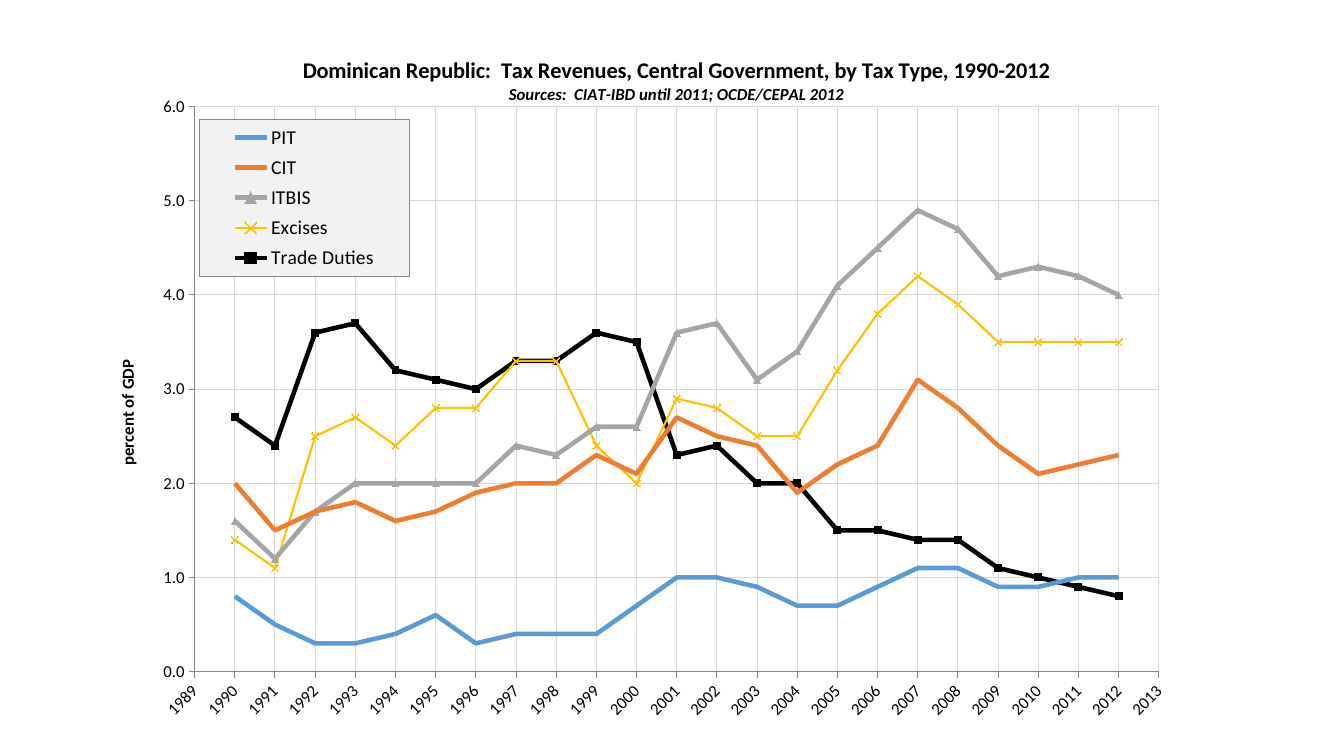
from pptx import Presentation
from pptx import util as u
from pptx.chart import data as chart_data
from pptx.dml.color import RGBColor
from pptx.enum import chart as kinds
from pptx.oxml import parse_xml
from pptx.oxml.ns import nsdecls, qn

BLACK = RGBColor(0x00, 0x00, 0x00)
BLUE = RGBColor(0x5B, 0x9B, 0xD5)
ORANGE = RGBColor(0xED, 0x7D, 0x31)
GRAY = RGBColor(0xA5, 0xA5, 0xA5)
GOLD = RGBColor(0xFF, 0xC0, 0x00)
GRID = RGBColor(0xD9, 0xD9, 0xD9)
AXIS = RGBColor(0x86, 0x86, 0x86)
LEGEND_FILL = RGBColor(0xF2, 0xF2, 0xF2)

MARKER = kinds.XL_MARKER_STYLE
YEARS = range(1990, 2013)
# name, colour, line width, marker, revenue in percent of GDP per year
TAXES = [
    ("PIT", BLUE, 3.25, MARKER.NONE,
     [0.8, 0.5, 0.3, 0.3, 0.4, 0.6, 0.3, 0.4, 0.4, 0.4, 0.7, 1, 1, 0.9, 0.7,
      0.7, 0.9, 1.1, 1.1, 0.9, 0.9, 1, 1]),
    ("CIT", ORANGE, 3.25, MARKER.NONE,
     [2, 1.5, 1.7, 1.8, 1.6, 1.7, 1.9, 2, 2, 2.3, 2.1, 2.7, 2.5, 2.4, 1.9,
      2.2, 2.4, 3.1, 2.8, 2.4, 2.1, 2.2, 2.3]),
    ("ITBIS", GRAY, 3.25, MARKER.TRIANGLE,
     [1.6, 1.2, 1.7, 2, 2, 2, 2, 2.4, 2.3, 2.6, 2.6, 3.6, 3.7, 3.1, 3.4,
      4.1, 4.5, 4.9, 4.7, 4.2, 4.3, 4.2, 4]),
    ("Excises", GOLD, 1.5, MARKER.X,
     [1.4, 1.1, 2.5, 2.7, 2.4, 2.8, 2.8, 3.3, 3.3, 2.4, 2, 2.9, 2.8, 2.5, 2.5,
      3.2, 3.8, 4.2, 3.9, 3.5, 3.5, 3.5, 3.5]),
    ("Trade Duties", BLACK, 3.25, MARKER.SQUARE,
     [2.7, 2.4, 3.6, 3.7, 3.2, 3.1, 3, 3.3, 3.3, 3.6, 3.5, 2.3, 2.4, 2, 2,
      1.5, 1.5, 1.4, 1.4, 1.1, 1, 0.9, 0.8]),
]


def place(element, after, **fractions):
    """Give a chart part a manual layout, as fractions of the chart."""
    old = element.find(qn("c:layout"))
    if old is not None:
        element.remove(old)
    target = '<c:layoutTarget val="inner"/>' if after is None else ""
    modes = "".join(f'<c:{key}Mode val="edge"/>' for key in "xy")
    sizes = "".join(f'<c:{key} val="{value}"/>' for key, value in fractions.items())
    layout = parse_xml(f'<c:layout {nsdecls("c")}><c:manualLayout>{target}{modes}{sizes}'
                       '</c:manualLayout></c:layout>')
    if after is None:
        element.insert(0, layout)
    else:
        element.find(qn(after)).addnext(layout)


class ChartSlide:
    font_name = "Calibri"

    def __init__(self, presentation):
        self.slide = presentation.slides.add_slide(presentation.slide_layouts[6])

    def style(self, font, size, bold=False, italic=False):
        font.name, font.size = self.font_name, u.Pt(size)
        font.bold, font.italic = bold, italic
        font.color.rgb = BLACK

    def scatter(self, left, top, width, height):
        data = chart_data.XyChartData(number_format="0.0")
        for name, _, _, _, values in TAXES:
            series = data.add_series(name)
            for year, value in zip(YEARS, values):
                series.add_data_point(year, value)
        frame = self.slide.shapes.add_chart(
            kinds.XL_CHART_TYPE.XY_SCATTER_LINES_NO_MARKERS,
            u.Pt(left), u.Pt(top), u.Pt(width), u.Pt(height), data)
        self.chart = frame.chart
        self.style(self.chart.font, 12)
        plot = self.chart.plots[0]
        plot.vary_by_categories = False
        for series, (_, color, width, marker, _) in zip(plot.series, TAXES):
            self.line(series, color, width, marker)
        plot_area = self.chart.element.find(".//" + qn("c:plotArea"))
        place(plot_area, None, x=0.09, y=0.109, w=0.826, h=0.816)

    def line(self, series, color, width, marker):
        series.smooth = False
        series.format.line.color.rgb = color
        series.format.line.width = u.Pt(width)
        series.marker.style = marker
        if marker == MARKER.NONE:
            return
        series.marker.size = 5
        series.marker.format.line.color.rgb = color
        if marker == MARKER.X:
            series.marker.format.fill.background()
        else:
            series.marker.format.fill.solid()
            series.marker.format.fill.fore_color.rgb = color

    def axis(self, axis, low, high, number_format):
        axis.minimum_scale, axis.maximum_scale, axis.major_unit = low, high, 1
        axis.major_tick_mark = kinds.XL_TICK_MARK.OUTSIDE
        axis.has_major_gridlines = True
        for line, color in ((axis.major_gridlines.format.line, GRID),
                            (axis.format.line, AXIS)):
            line.color.rgb, line.width = color, u.Pt(0.75)
        axis.tick_labels.number_format = number_format
        axis.tick_labels.number_format_is_linked = False
        self.style(axis.tick_labels.font, 12)

    def title(self, owner, lines, x, y):
        """Write lines of (text, size, italic) as a chart or axis title."""
        frame = owner.text_frame
        for index, (words, size, italic) in enumerate(lines):
            paragraph = frame.paragraphs[0] if index == 0 else frame.add_paragraph()
            paragraph.text = words
            self.style(paragraph.runs[0].font, size, True, italic)
        place(owner._element, "c:tx", x=x, y=y)

    def legend(self, size, **position):
        self.chart.has_legend = True
        legend = self.chart.legend
        legend.position = kinds.XL_LEGEND_POSITION.RIGHT
        legend.include_in_layout = True
        self.style(legend.font, size)
        element = legend._element
        place(element, "c:legendPos", **position)
        element.find(qn("c:overlay")).addnext(parse_xml(
            f'<c:spPr {nsdecls("c", "a")}>'
            f'<a:solidFill><a:srgbClr val="{LEGEND_FILL}"/></a:solidFill>'
            f'<a:ln w="{u.Pt(0.75)}"><a:solidFill><a:srgbClr val="{AXIS}"/></a:solidFill>'
            '</a:ln></c:spPr>'))


def rotate(element, degrees):
    body = element.find(".//" + qn("a:bodyPr"))
    body.set("rot", str(degrees * 60000))
    body.set("vert", "horz")


def main():
    presentation = Presentation()
    presentation.slide_width, presentation.slide_height = u.Pt(960), u.Pt(540)
    page = ChartSlide(presentation)
    page.scatter(64, 22.3, 833.8, 494.6)
    year_axis, share_axis = page.chart.category_axis, page.chart.value_axis
    page.axis(year_axis, 1989, 2013, "0")
    page.axis(share_axis, 0, 6, "0.0")
    rotate(year_axis._element.find(qn("c:txPr")), -45)
    page.title(page.chart.chart_title, [
        ("Dominican Republic:  Tax Revenues, Central Government, by Tax Type, 1990-2012",
         16, False),
        ("Sources:  CIAT-IBD until 2011; OCDE/CEPAL 2012", 12, True),
    ], 0.18, 0.03)
    page.title(share_axis.axis_title, [("percent of GDP", 12, False)], 0.02, 0.47)
    rotate(share_axis.axis_title._element, -90)
    page.legend(14, x=0.094, y=0.127, w=0.18, h=0.227)
    presentation.save("out.pptx")


if __name__ == "__main__":
    main()
